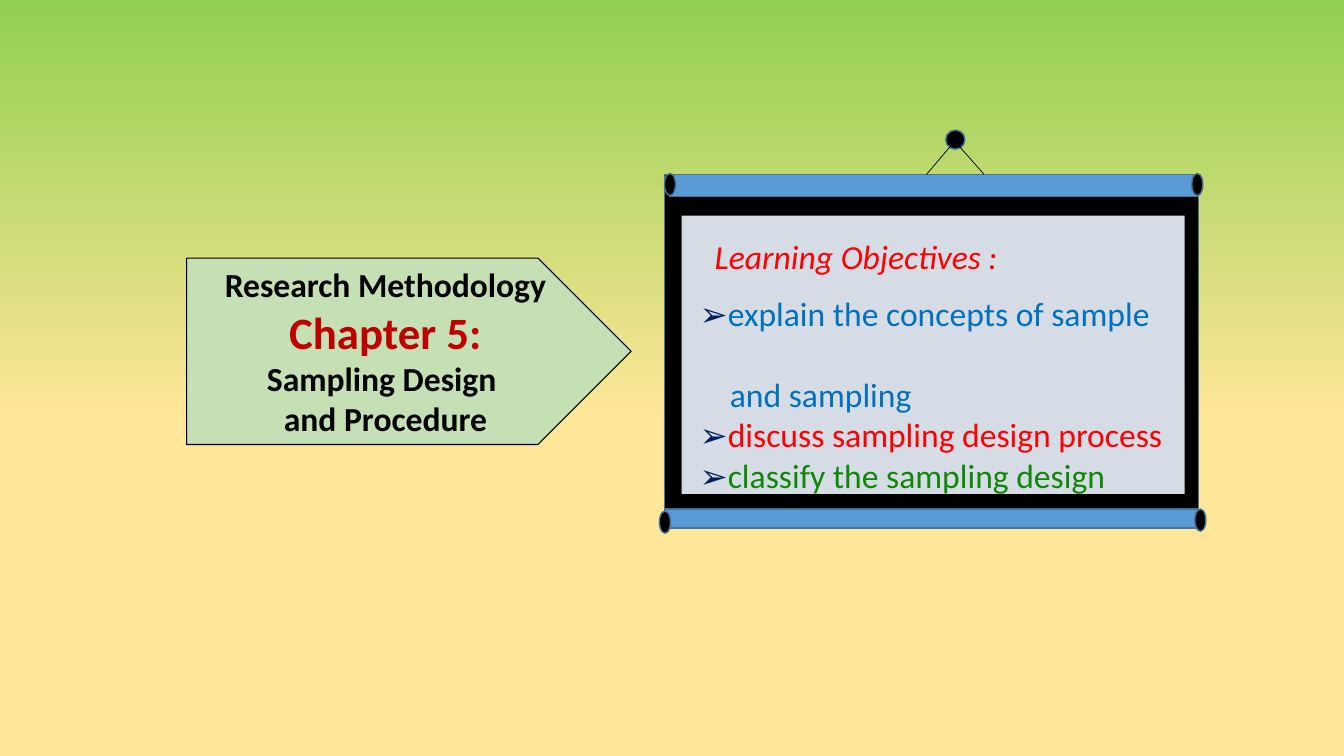
import pptx
import pptx.util
import pptx.dml.color
import pptx.enum.shapes
import pptx.enum.text
import pptx.oxml.ns
import lxml.etree

Inches = pptx.util.Inches
Pt = pptx.util.Pt
SHAPE = pptx.enum.shapes.MSO_SHAPE
ALIGN = pptx.enum.text.PP_ALIGN
qn = pptx.oxml.ns.qn

BLACK, BLUE, EDGE, NAVY, RED = "000000", "5B9BD5", "43739E", "002060", "FF0000"


def rgb(value):
    return pptx.dml.color.RGBColor.from_string(value)


def set_background(s):
    fill = s.background.fill
    fill.gradient()
    fill.gradient_angle = 270
    for stop, (position, color) in zip(fill.gradient_stops, [(0, "92D050"), (0.56, "FFE699")]):
        stop.position = position
        stop.color.rgb = rgb(color)


def add_block(s, kind, left, top, width, height, fill, line=EDGE, weight=1):
    sp = s.shapes.add_shape(kind, Inches(left), Inches(top), Inches(width), Inches(height))
    sp.shadow.inherit = False
    sp.fill.solid()
    sp.fill.fore_color.rgb = rgb(fill)
    if line:
        sp.line.color.rgb = rgb(line)
        sp.line.width = Pt(weight)
    else:
        sp.line.fill.background()
    return sp


def add_cord(s, x1, y1, x2, y2):
    cord = s.shapes.add_connector(
        pptx.enum.shapes.MSO_CONNECTOR.STRAIGHT, Inches(x1), Inches(y1), Inches(x2), Inches(y2))
    cord.line.color.rgb = rgb(BLACK)
    cord.line.width = Pt(0.5)
    lxml.etree.SubElement(cord._element.spPr, qn("a:effectLst"))


def write_run(p, text, color, **formats):
    r = p.add_run()
    r.text = text
    r.font.color.rgb = rgb(color)
    for name, value in {"name": "Calibri", "size": Pt(24), **formats}.items():
        setattr(r.font, name, value)


def next_paragraph(tf, i):
    return tf.add_paragraph() if i else tf.paragraphs[0]


def add_chapter_sign(s, left, top, width, height):
    sp = add_block(s, SHAPE.PENTAGON, left, top, width, height, "C5E0B4", BLACK, 0.75)
    tf = sp.text_frame
    tf.word_wrap = True
    lines = [
        ("Research Methodology", BLACK, 24),
        ("Chapter 5:", "C00000", 32),
        ("Sampling Design ", BLACK, 24),
        ("and Procedure", BLACK, 24),
    ]
    for i, (text, color, size) in enumerate(lines):
        p = next_paragraph(tf, i)
        p.alignment = ALIGN.CENTER
        write_run(p, text, color, size=Pt(size), bold=True)


def add_objectives(s, left, top, width, height):
    tf = s.shapes.add_textbox(Inches(left), Inches(top), Inches(width), Inches(height)).text_frame
    tf.word_wrap = True
    lines = [
        ("Learning Objectives :", RED, False, 0.15, 0),
        ("explain the concepts of sample", "0070C0", True, 0, 12),
        ("and sampling", "0070C0", False, 0.3, 29),
        ("discuss sampling design process", RED, True, 0, 0),
        ("classify the sampling design", "108707", True, 0, 0),
    ]
    for i, (text, color, marked, indent, before) in enumerate(lines):
        p = next_paragraph(tf, i)
        p._p.get_or_add_pPr().set("marL", str(Inches(indent)))
        p.space_before = Pt(before)
        if marked:
            write_run(p, "➢", NAVY, name="Arial")
        write_run(p, text, color, italic=i == 0)
    p.alignment = ALIGN.JUSTIFY


def add_hanging_board(s, left, top, width, height):
    frame_left, frame_top = left + 0.05, top + 0.44
    frame_width, frame_height = width - 0.12, height - 0.49
    add_block(s, SHAPE.RECTANGLE, frame_left, frame_top, frame_width, frame_height, BLACK)
    add_block(s, SHAPE.RECTANGLE, left + 0.1, frame_top, frame_width - 0.05, 0.22, BLUE)
    add_block(s, SHAPE.RECTANGLE, left + 0.22, top + 0.85, 4.99, 2.76, "D6DCE5", None)
    add_objectives(s, left + 0.3, top + 1, 4.91, 2.29)

    add_block(s, SHAPE.OVAL, left + 2.84, top, 0.19, 0.19, BLACK)
    for reach in (-0.28, 0.29):
        add_cord(s, left + 2.93, top + 0.11, left + 2.93 + reach, frame_top)

    add_block(s, SHAPE.RECTANGLE, frame_left, top + height - 0.24, frame_width, 0.19, BLUE)
    for dx, dy in [(0.05, 0.43), (5.28, 0.43), (5.31, 3.76), (0, 3.78)]:
        add_block(s, SHAPE.OVAL, left + dx, top + dy, 0.11, 0.22, BLACK)


def main():
    prs = pptx.Presentation()
    prs.slide_width, prs.slide_height = Inches(13.33), Inches(7.5)
    s = prs.slides.add_slide(prs.slide_layouts[6])
    set_background(s)
    add_chapter_sign(s, 1.85, 2.56, 4.41, 1.85)
    add_hanging_board(s, 6.54, 1.29, 5.42, 4)
    prs.save("out.pptx")


if __name__ == "__main__":
    main()
